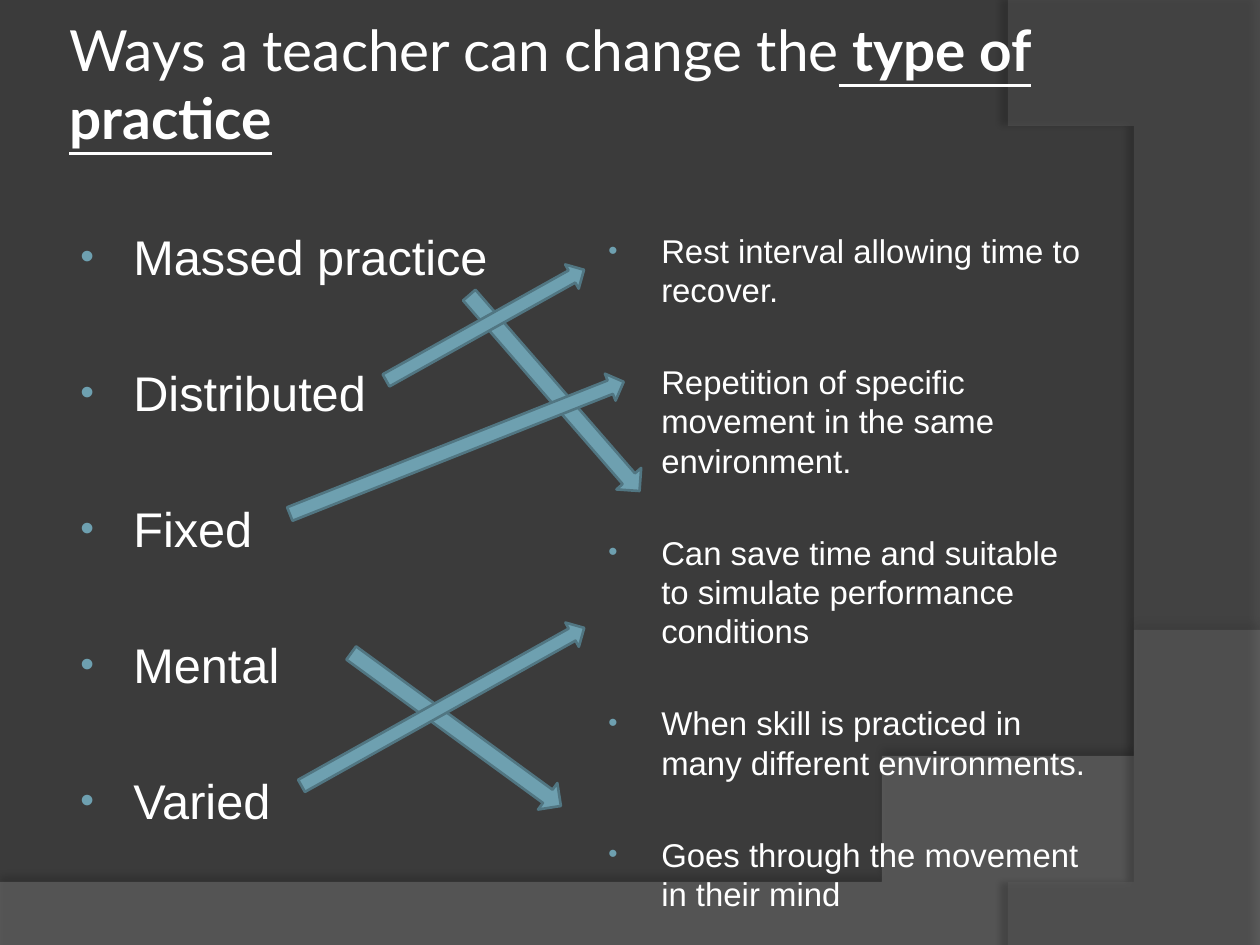
from dataclasses import dataclass

from lxml import etree
from pptx import Presentation
from pptx.dml.color import RGBColor
from pptx.enum import shapes, text
from pptx.oxml.ns import qn
from pptx.util import Inches, Pt


@dataclass(frozen=True)
class Theme:
    background: str = "3B3B3B"
    ink: str = "FFFFFF"
    accent: str = "6EA0B0"
    accent_line: str = "517682"
    title_font: str = "Lato"
    body_font: str = "Arial"
    title_size: float = 32.4
    term_size: float = 27.8
    meaning_size: float = 18.8


@dataclass(frozen=True)
class Arrow:
    left: float
    top: float
    width: float
    height: float
    angle: float


@dataclass(frozen=True)
class BulletList:
    box: tuple[float, float, float, float]
    items: list[str]
    size: float
    line: float
    gap: float


@dataclass(frozen=True)
class Sweep:
    corners: list[tuple[float, float]]
    curve: list[tuple[float, float]]
    color: str
    opacity: int
    shadow_opacity: int
    shadow_distance: float
    shadow_angle: int


THEME = Theme()

SWEEPS = [
    Sweep([(0, 7.05), (0, 7.5), (10, 7.5)],
          [(10, 5.2), (5.59, 7.29), (3.91, 7.19), (0, 7.05)],
          "7F7F7F", 45, 35, 3.5, 270),
    Sweep([(10, 0.02), (10, 7.5)],
          [(8.21, 7.5), (9.35, 6.19), (10.18, 3), (8, 0)],
          "5E5E5E", 40, 45, 4, 180),
]

TERMS = BulletList(
    (0.5, 1.75, 3.79, 4.95),
    ["Massed practice", "Distributed", "Fixed", "Mental", "Varied"],
    THEME.term_size, line=33.4, gap=44.3)

MEANINGS = BulletList(
    (4.69, 1.78, 4.03, 5.06),
    ["Rest interval allowing time to recover.",
     "Repetition of specific movement in the same environment.",
     "Can save time and suitable to simulate performance conditions",
     "When skill is practiced in many different environments.",
     "Goes through the movement in their mind"],
    THEME.meaning_size, line=22.5, gap=30)

ARROWS = [
    Arrow(3.37, 2.99, 2.06, 0.26, 49),
    Arrow(2.95, 2.47, 1.8, 0.22, 330.8),
    Arrow(2.2, 3.44, 2.85, 0.23, 338.4),
    Arrow(2.59, 5.66, 2.06, 0.26, 36.1),
    Arrow(2.23, 5.5, 2.57, 0.22, 330.8),
]


def rgb(color: str) -> RGBColor:
    return RGBColor.from_string(color)


def add_xml(parent, tag: str, **attributes):
    return etree.SubElement(parent, qn(tag), {k: str(v) for k, v in attributes.items()})


def curve_points(curve, steps: int = 40) -> list[tuple[float, float]]:
    """Points along a cubic curve given by its four control points."""
    points = []
    for i in range(steps + 1):
        t = i / steps
        weights = ((1 - t) ** 3, 3 * t * (1 - t) ** 2, 3 * t * t * (1 - t), t ** 3)
        points.append(tuple(sum(w * c[axis] for w, c in zip(weights, curve))
                            for axis in (0, 1)))
    return points


def add_sweep(slide, sweep: Sweep) -> None:
    start, *rest = sweep.corners + curve_points(sweep.curve)
    builder = slide.shapes.build_freeform(*start, scale=Inches(1))
    builder.add_line_segments(rest, close=True)
    sp = builder.convert_to_shape()
    sp.fill.solid()
    sp.fill.fore_color.rgb = rgb(sweep.color)
    sp.line.fill.background()
    props = sp.fill._xPr
    add_xml(props.find(qn("a:solidFill"))[0], "a:alpha", val=sweep.opacity * 1000)
    # Soft shadow along the curved edge
    sp.shadow.inherit = False
    shadow = add_xml(props.find(qn("a:effectLst")), "a:outerShdw",
                     blurRad=Pt(4), dist=Pt(sweep.shadow_distance),
                     dir=sweep.shadow_angle * 60000, algn="ctr", rotWithShape=0)
    color = add_xml(shadow, "a:srgbClr", val="000000")
    add_xml(color, "a:alpha", val=sweep.shadow_opacity * 1000)


def add_text(p, content: str, *, font: str, size: float,
             bold: bool = False, underline: bool = False) -> None:
    r = p.add_run()
    r.text = content
    r.font.name = font
    r.font.size = Pt(size)
    r.font.bold = bold
    r.font.underline = underline
    r.font.color.rgb = rgb(THEME.ink)


def add_frame(slide, box: tuple[float, float, float, float]):
    tf = slide.shapes.add_textbox(*map(Inches, box)).text_frame
    tf.word_wrap = True
    return tf


def add_title(slide) -> None:
    tf = add_frame(slide, (0.5, 0.3, 8.17, 1.25))
    tf.vertical_anchor = text.MSO_ANCHOR.MIDDLE
    tf.margin_left = tf.margin_right = tf.margin_top = Inches(0.05)
    tf.margin_bottom = Inches(0.59)  # lifts the two lines towards the top
    p = tf.paragraphs[0]
    style = dict(font=THEME.title_font, size=THEME.title_size)
    add_text(p, "Ways a teacher can change the", **style)
    add_text(p, " type of practice", bold=True, underline=True, **style)


def add_bullet(p) -> None:
    props = p._p.get_or_add_pPr()
    props.set("marL", str(Inches(0.46)))
    props.set("indent", str(Inches(-0.42)))
    add_xml(add_xml(props, "a:buClr"), "a:srgbClr", val=THEME.accent)
    add_xml(props, "a:buSzPct", val=80000)
    add_xml(props, "a:buFont", typeface=THEME.body_font)
    add_xml(props, "a:buChar", char="•")


def add_list(slide, bullets: BulletList) -> None:
    tf = add_frame(slide, bullets.box)
    for i, item in enumerate(bullets.items):
        p = tf.add_paragraph() if i else tf.paragraphs[0]
        p.line_spacing = Pt(bullets.line)
        p.space_before = Pt(bullets.gap if i else 0)
        add_bullet(p)
        add_text(p, item, font=THEME.body_font, size=bullets.size)


def add_arrow(slide, arrow: Arrow) -> None:
    box = map(Inches, (arrow.left, arrow.top, arrow.width, arrow.height))
    sp = slide.shapes.add_shape(shapes.MSO_SHAPE.RIGHT_ARROW, *box)
    sp.rotation = arrow.angle
    sp.shadow.inherit = False
    sp.fill.solid()
    sp.fill.fore_color.rgb = rgb(THEME.accent)
    sp.line.color.rgb = rgb(THEME.accent_line)
    sp.line.width = Pt(1.5)


def main() -> None:
    prs = Presentation()
    prs.slide_width, prs.slide_height = Inches(10), Inches(7.5)
    s = prs.slides.add_slide(prs.slide_layouts[6])

    # Background
    s.background.fill.solid()
    s.background.fill.fore_color.rgb = rgb(THEME.background)
    for sweep in SWEEPS:
        add_sweep(s, sweep)

    # Title and the two columns
    add_title(s)
    for bullets in (TERMS, MEANINGS):
        add_list(s, bullets)

    # Arrows from each term to its meaning
    for arrow in ARROWS:
        add_arrow(s, arrow)

    prs.save("out.pptx")


if __name__ == "__main__":
    main()
